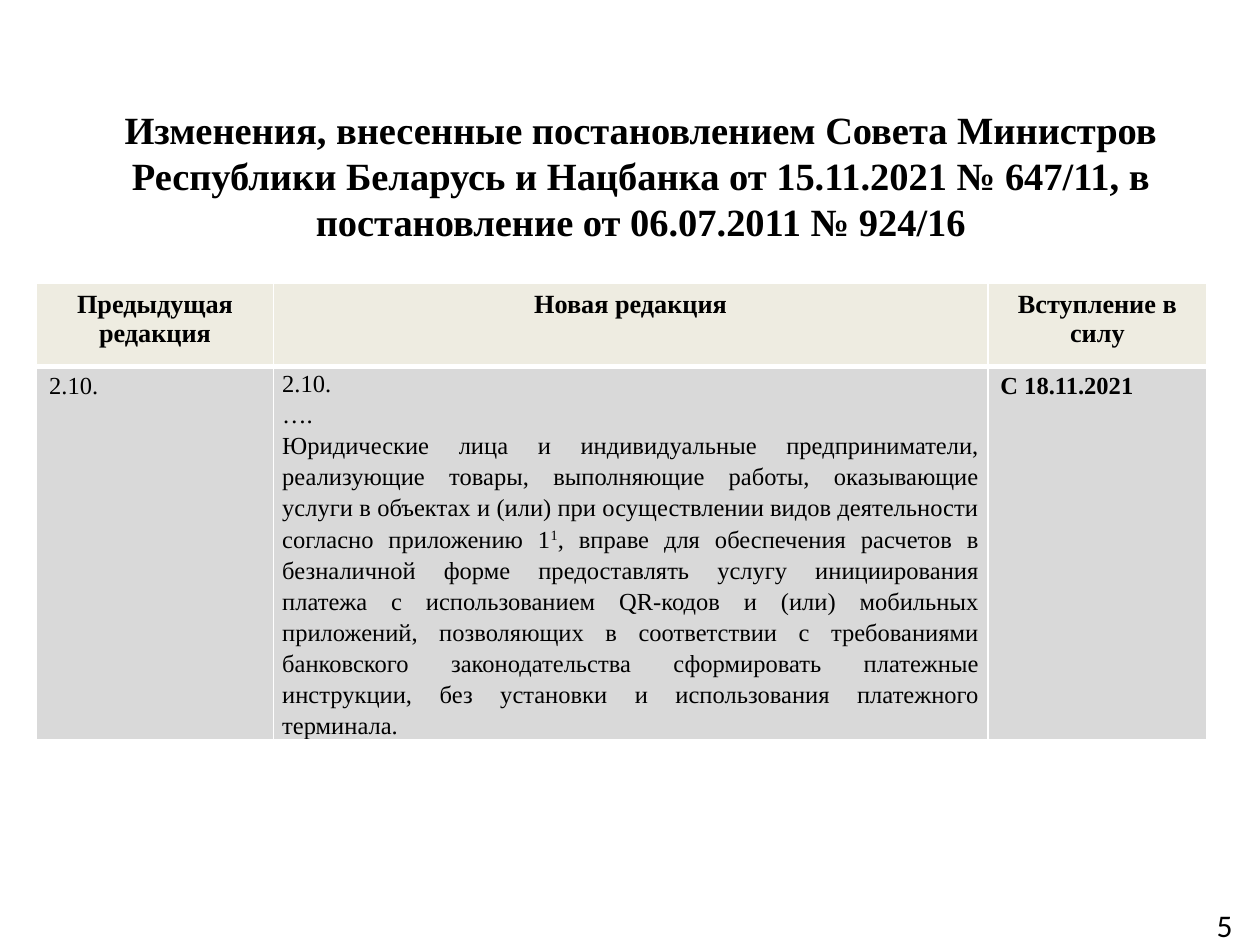
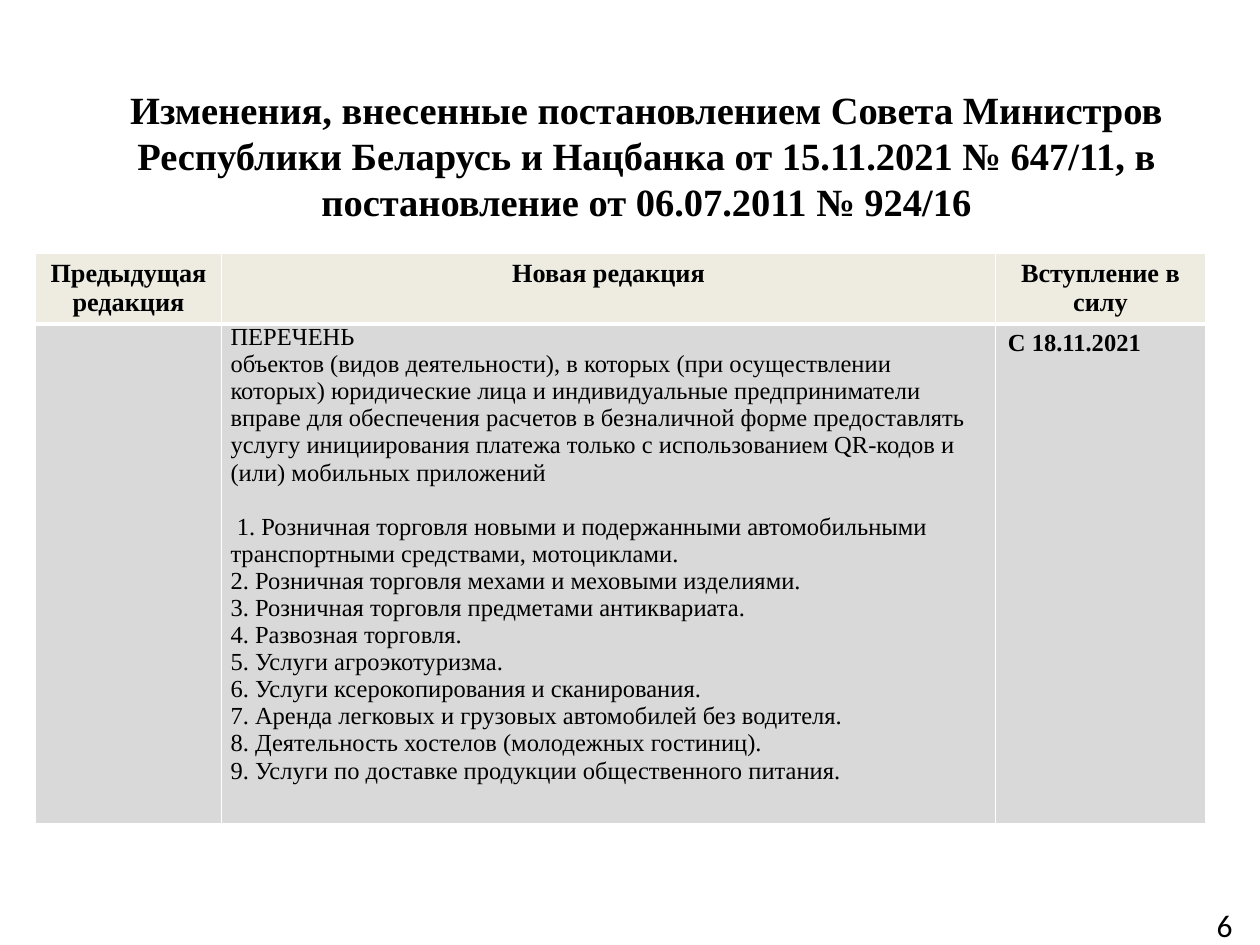
import pptx
import pptx.dml.color
import pptx.enum.text
import pptx.oxml.ns
import pptx.util
from lxml import etree
from pptx.util import Inches

BLACK = pptx.dml.color.RGBColor(0x00, 0x00, 0x00)
WHITE = pptx.dml.color.RGBColor(0xFF, 0xFF, 0xFF)
CREAM = pptx.dml.color.RGBColor(0xEE, 0xEC, 0xE1)
GREY = pptx.dml.color.RGBColor(0xD9, 0xD9, 0xD9)

ALIGN = pptx.enum.text.PP_ALIGN
MIDDLE = pptx.enum.text.MSO_ANCHOR.MIDDLE
SERIF = "Times New Roman"
TITLE_FONT = {"name": SERIF, "size": pptx.util.Pt(22), "bold": True}
HEADER_FONT = {"name": SERIF, "size": pptx.util.Pt(15), "bold": True}
BODY_FONT = {"name": SERIF, "size": pptx.util.Pt(14), "bold": False}
DATE_FONT = {**BODY_FONT, "bold": True}
NUMBER_FONT = {"name": "Calibri", "size": pptx.util.Pt(18), "bold": False}

THIN, THICK = 1, 3
SUPERSCRIPT = "30000"
TITLE = (
    "Изменения, внесенные постановлением Совета Министров Республики Беларусь "
    "и Нацбанка от 15.11.2021 № 647/11, в постановление от 06.07.2011 № 924/16"
)
HEADERS = ["Предыдущая редакция", "Новая редакция", "Вступление в силу"]
START_DATE = "С 18.11.2021"

CLAUSE = [
    "2.10.",
    "….",
    "Юридические лица и индивидуальные предприниматели, реализующие товары, "
    "выполняющие работы, оказывающие услуги в объектах и (или) при осуществлении "
    "видов деятельности согласно приложению 1",
]
CLAUSE_END = (
    ", вправе для обеспечения расчетов в безналичной форме предоставлять услугу "
    "инициирования платежа с использованием QR-кодов и (или) мобильных приложений, "
    "позволяющих в соответствии с требованиями банковского законодательства "
    "сформировать платежные инструкции, без установки и использования платежного "
    "терминала."
)
LIST_HEADING = [
    "ПЕРЕЧЕНЬ",
    "объектов (видов деятельности), в которых (при осуществлении которых) "
    "юридические лица и индивидуальные предприниматели вправе для обеспечения "
    "расчетов в безналичной форме предоставлять услугу инициирования платежа только "
    "с использованием QR-кодов и (или) мобильных приложений",
]
ACTIVITIES = [
    "1. Розничная торговля новыми и подержанными автомобильными транспортными "
    "средствами, мотоциклами.",
    "2. Розничная торговля мехами и меховыми изделиями.",
    "3. Розничная торговля предметами антиквариата.",
    "4. Развозная торговля.",
    "5. Услуги агроэкотуризма.",
    "6. Услуги ксерокопирования и сканирования.",
    "7. Аренда легковых и грузовых автомобилей без водителя.",
    "8. Деятельность хостелов (молодежных гостиниц).",
    "9. Услуги по доставке продукции общественного питания.",
]


def apply(target, values):
    for name, value in values.items():
        setattr(target, name, value)


class AmendmentDeck:
    def __init__(self):
        self.deck = pptx.Presentation()
        self.deck.slide_width = Inches(10)
        self.deck.slide_height = Inches(7.5)
        self.page = None

    def add_page(self, number, title_area):
        self.page = self.deck.slides.add_slide(self.deck.slide_layouts[5])
        title = self.page.shapes.title
        self.place(title, title_area)
        self.fill_frame(title.text_frame, [TITLE], TITLE_FONT, ALIGN.CENTER)
        box = self.page.shapes.add_textbox(
            Inches(9.44), Inches(7.18), Inches(0.56), Inches(0.32)
        )
        self.fill_frame(box.text_frame, [str(number)], NUMBER_FONT, ALIGN.CENTER)
        for frame in (title.text_frame, box.text_frame):
            apply(frame, {
                "word_wrap": True,
                "vertical_anchor": MIDDLE,
                "auto_size": pptx.enum.text.MSO_AUTO_SIZE.NONE,
            })

    def place(self, shape, area):
        names = ("left", "top", "width", "height")
        apply(shape, {name: Inches(value) for name, value in zip(names, area)})

    def add_span(self, para, text, font):
        span = para.add_run()
        span.text = text
        apply(span.font, font)
        span.font.color.rgb = BLACK
        return span

    def fill_frame(self, frame, texts, font, align=ALIGN.LEFT, spacing=None):
        for index, text in enumerate(texts):
            para = frame.add_paragraph() if index else frame.paragraphs[0]
            apply(para, {"alignment": align, "line_spacing": spacing})
            self.add_span(para, text, font)
        return frame.paragraphs

    def add_table(self, left, top, columns, rows):
        table = self.page.shapes.add_table(
            len(rows), len(columns), Inches(left), Inches(top),
            Inches(sum(columns)), Inches(sum(rows)),
        ).table
        table.horz_banding = False
        for column, width in zip(table.columns, columns):
            column.width = Inches(width)
        for row, height in zip(table.rows, rows):
            row.height = Inches(height)
        for index, header in enumerate(HEADERS):
            head, body = table.cell(0, index), table.cell(1, index)
            self.style_cell(head, CREAM, THIN, THICK)
            self.style_cell(body, GREY, THICK, THIN)
            self.fill_frame(head.text_frame, [header], HEADER_FONT, ALIGN.CENTER)
        previous, new, start = table.rows[1].cells
        apply(new, {
            "margin_left": Inches(0.07), "margin_right": Inches(0.07),
            "margin_top": 0, "margin_bottom": 0,
        })
        self.fill_frame(start.text_frame, [START_DATE], DATE_FONT)
        return previous.text_frame, new.text_frame

    def style_cell(self, cell, color, top, bottom):
        properties = cell._tc.get_or_add_tcPr()
        qn = pptx.oxml.ns.qn
        borders = {"lnL": THIN, "lnR": THIN, "lnT": top, "lnB": bottom}
        for side, width in borders.items():
            line = etree.SubElement(
                properties, qn(f"a:{side}"), w=str(pptx.util.Pt(width))
            )
            fill = etree.SubElement(line, qn("a:solidFill"))
            etree.SubElement(fill, qn("a:srgbClr"), val=str(WHITE))
        cell.fill.solid()
        cell.fill.fore_color.rgb = color


def build_clause_page(amendments):
    amendments.add_page(5, (0.43, 0.84, 9.31, 1.1))
    previous, new = amendments.add_table(0.29, 2.25, (1.88, 5.67, 1.74), (0.66, 2.96))
    amendments.fill_frame(previous, ["2.10."], BODY_FONT, ALIGN.JUSTIFY)
    para = amendments.fill_frame(new, CLAUSE, BODY_FONT, ALIGN.JUSTIFY, 1.15)[-1]
    annex_index = amendments.add_span(para, "1", BODY_FONT)
    annex_index.font._element.set("baseline", SUPERSCRIPT)
    amendments.add_span(para, CLAUSE_END, BODY_FONT)


def build_activities_page(amendments):
    amendments.add_page(6, (0.51, 0.76, 9.24, 0.94))
    previous, new = amendments.add_table(0.28, 2.01, (1.48, 6.14, 1.67), (0.51, 3.97))
    apply(previous.paragraphs[0].font, BODY_FONT)
    paras = amendments.fill_frame(new, LIST_HEADING + ACTIVITIES, BODY_FONT)
    first_activity = paras[len(LIST_HEADING)]
    first_activity.space_before = pptx.util.Pt(15.5)
    first_activity._p.get_or_add_pPr().set("indent", str(Inches(0.05)))


def main():
    amendments = AmendmentDeck()
    build_clause_page(amendments)
    build_activities_page(amendments)
    amendments.deck.save("out.pptx")


if __name__ == "__main__":
    main()
